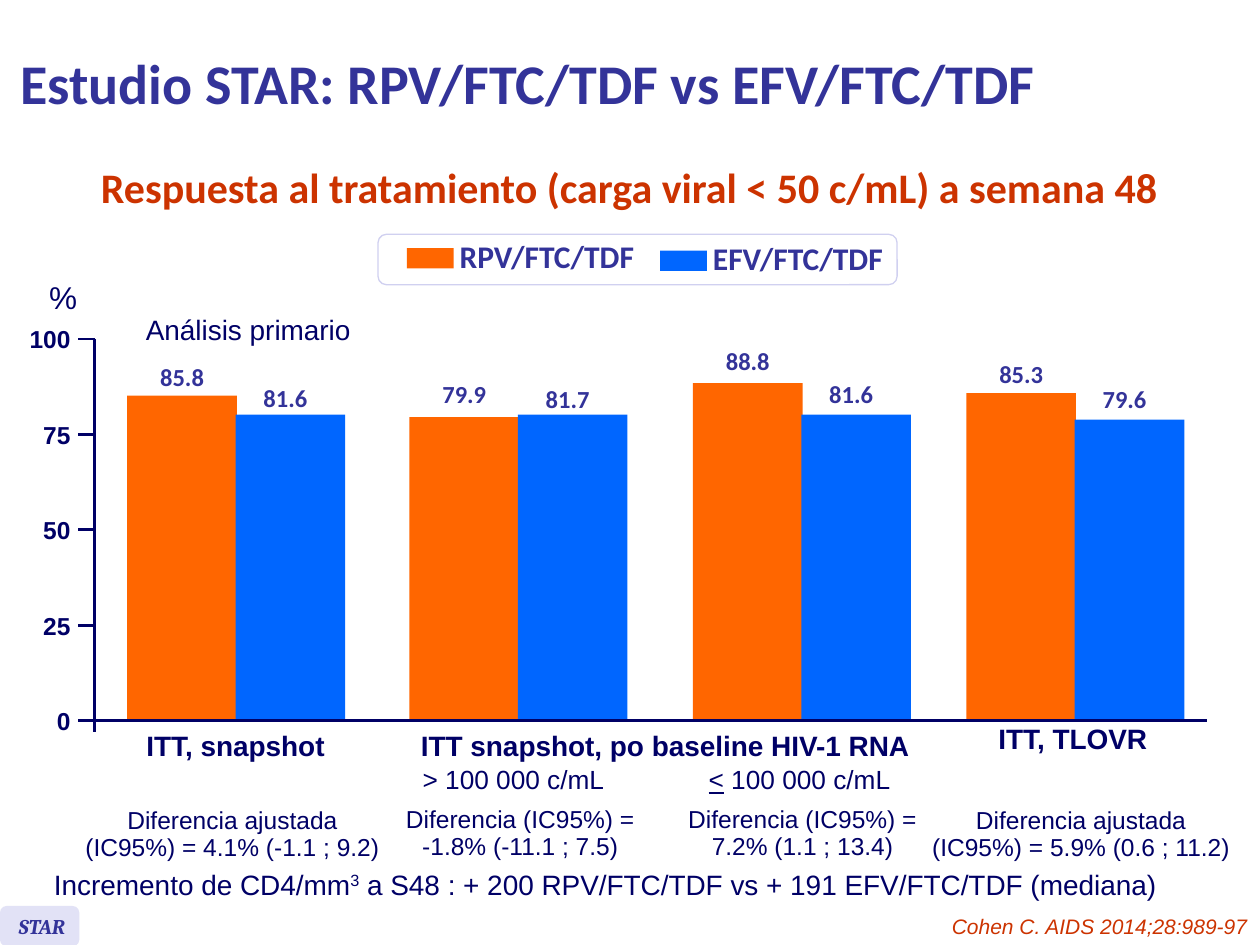
from dataclasses import dataclass
from typing import NamedTuple

from lxml.etree import SubElement
from pptx import Presentation
from pptx.dml.color import RGBColor
from pptx.enum.shapes import MSO_CONNECTOR, MSO_SHAPE
from pptx.enum.text import MSO_ANCHOR as Anchor, PP_ALIGN as Align
from pptx.oxml.ns import qn
from pptx.util import Inches, Pt


@dataclass(frozen=True)
class Theme:
    navy: str = "000066"
    indigo: str = "333399"
    red: str = "CC3300"
    rilpivirine: str = "FF6600"
    efavirenz: str = "0066FF"
    tag: str = "E2E2F6"
    legend_border: str = "D0D0F0"
    white: str = "FFFFFF"
    title: int = 32
    subtitle: int = 24
    large: int = 18
    body: int = 16
    baseline: int = 15
    small: int = 14
    footer: int = 12


THEME = Theme()


class Box(NamedTuple):
    left: float
    top: float
    width: float
    height: float


class Style(NamedTuple):
    size: int
    color: str = THEME.navy
    font: str = "Arial"
    bold: bool = False
    italic: bool = False


class Bar(NamedTuple):
    value: str
    top: float
    label_top: float


class Group(NamedTuple):
    left: float
    rilpivirine: Bar
    efavirenz: Bar
    difference_box: Box
    difference: list[str]


class Label(NamedTuple):
    box: Box
    text: str
    style: Style
    align: Align = Align.CENTER


PLAIN = Style(THEME.body)
HEADING = Style(THEME.body, bold=True)
SMALL = Style(THEME.small)
TICK = Style(THEME.small, bold=True)
BASELINE = Style(THEME.baseline)
VALUE = Style(THEME.small, THEME.indigo, "Calibri", bold=True)
LEGEND = Style(THEME.large, THEME.indigo, "Calibri", bold=True)

BAR_WIDTH = 0.87
BAR_STEP = 0.86
AXIS_X = 0.75
AXIS_Y = 5.72
AXIS_TOP = 2.69

GROUPS = [
    Group(1.01, Bar("85.8", 3.14, 2.77), Bar("81.6", 3.29, 2.94), Box(0.57, 6.37, 2.55, 0.53),
          ["Diferencia ajustada", "(IC95%) = 4.1% (-1.1 ; 9.2)"]),
    Group(3.25, Bar("79.9", 3.31, 2.91), Bar("81.7", 3.29, 2.95), Box(3.01, 6.36, 2.24, 0.53),
          ["Diferencia (IC95%) =", "-1.8% (-11.1 ; 7.5)"]),
    Group(5.5, Bar("88.8", 3.04, 2.65), Bar("81.6", 3.29, 2.91), Box(5.25, 6.36, 2.24, 0.53),
          ["Diferencia (IC95%) =", "7.2% (1.1 ; 13.4)"]),
    Group(7.67, Bar("85.3", 3.12, 2.75), Bar("79.6", 3.33, 2.95), Box(7.29, 6.37, 2.58, 0.53),
          ["Diferencia ajustada", "(IC95%) = 5.9% (0.6 ; 11.2)"]),
]

LABELS = [
    Label(Box(0.66, 1.23, 8.67, 0.5), "Respuesta al tratamiento (carga viral < 50 c/mL) a semana 48",
          Style(THEME.subtitle, THEME.red, "Calibri", bold=True)),
    Label(Box(7, 7.2, 3, 0.3), "Cohen C. AIDS 2014;28:989-97",
          Style(THEME.footer, THEME.red, italic=True), Align.RIGHT),
    Label(Box(0.05, 7.2, 0.61, 0.3), "STAR",
          Style(THEME.footer, THEME.indigo, "Cambria", bold=True, italic=True), Align.LEFT),
    Label(Box(3.55, 1.83, 1.73, 0.4), "RPV/FTC/TDF", LEGEND, Align.LEFT),
    Label(Box(5.56, 1.85, 1.75, 0.4), "EFV/FTC/TDF", LEGEND, Align.LEFT),
    Label(Box(0.2, 2.16, 0.51, 0.4), "%", Style(THEME.large), Align.RIGHT),
    Label(Box(1.01, 2.43, 1.92, 0.37), "Análisis primario", PLAIN),
    Label(Box(1.05, 5.73, 1.64, 0.37), "ITT, snapshot", HEADING),
    Label(Box(3.17, 5.73, 4.22, 0.37), "ITT snapshot, po baseline HIV-1 RNA", HEADING),
    Label(Box(7.81, 5.68, 1.41, 0.37), "ITT, TLOVR", HEADING),
]


def place(shape, box: Box) -> None:
    shape.left, shape.top, shape.width, shape.height = map(Inches, box)


def format_paragraph(paragraph, style: Style, align: Align) -> None:
    paragraph.alignment = align
    font = paragraph.font
    font.name, font.size = style.font, Pt(style.size)
    font.bold, font.italic = style.bold, style.italic
    font.color.rgb = RGBColor.from_string(style.color)


def add_text(slide, box: Box, lines: list[str], style: Style, align: Align = Align.CENTER,
             spacing: float = 1.0, anchor: Anchor = Anchor.TOP):
    """Centred text stays on its line and may overflow its box evenly."""
    frame = slide.shapes.add_textbox(*map(Inches, box)).text_frame
    frame.word_wrap = align != Align.CENTER
    frame.vertical_anchor = anchor
    frame.text = "\n".join(lines)
    for paragraph in frame.paragraphs:
        paragraph.line_spacing = spacing
        format_paragraph(paragraph, style, align)
    return frame


def add_block(slide, box: Box, fill: str, border: str | None = None, rounded: bool = False) -> None:
    kind = MSO_SHAPE.ROUNDED_RECTANGLE if rounded else MSO_SHAPE.RECTANGLE
    shape = slide.shapes.add_shape(kind, *map(Inches, box))
    shape.shadow.inherit = False
    shape.fill.solid()
    shape.fill.fore_color.rgb = RGBColor.from_string(fill)
    if border:
        shape.line.color.rgb = RGBColor.from_string(border)
        shape.line.width = Pt(0.75)
    else:
        shape.line.fill.background()


def add_line(slide, x1: float, y1: float, x2: float, y2: float) -> None:
    line = slide.shapes.add_connector(MSO_CONNECTOR.STRAIGHT, *map(Inches, (x1, y1, x2, y2)))
    line.line.color.rgb = RGBColor.from_string(THEME.navy)
    line.line.width = Pt(1.5)
    SubElement(line._element.spPr, qn("a:effectLst"))


def add_axes(slide) -> None:
    step = (AXIS_Y - AXIS_TOP) / 4
    for index in range(5):
        y = AXIS_Y - index * step
        frame = add_text(slide, Box(0.16, y - 0.12, 0.4, 0.24), [str(index * 25)], TICK,
                         Align.RIGHT, anchor=Anchor.MIDDLE)
        frame.margin_left = frame.margin_right = frame.margin_top = frame.margin_bottom = 0
        add_line(slide, 0.62, y, AXIS_X if index else 9.58, y)
    add_line(slide, AXIS_X, AXIS_TOP, AXIS_X, 5.81)


def add_group(slide, group: Group) -> None:
    series = [(group.rilpivirine, THEME.rilpivirine, 0, 0.16),
              (group.efavirenz, THEME.efavirenz, BAR_STEP, 0.98)]
    for bar, color, offset, label_offset in series:
        add_block(slide, Box(group.left + offset, bar.top, BAR_WIDTH, AXIS_Y - bar.top), color)
        frame = add_text(slide, Box(group.left + label_offset, bar.label_top, 0.55, 0.44),
                         [bar.value], VALUE)
        frame.margin_top = frame.margin_bottom = Inches(0.1)
    add_text(slide, group.difference_box, group.difference, SMALL, spacing=0.9)


def add_title(slide) -> None:
    title = slide.shapes.title
    place(title, Box(0.06, 0.05, 9.55, 1.21))
    frame = title.text_frame
    frame.text = "Estudio STAR: RPV/FTC/TDF vs EFV/FTC/TDF"
    frame.vertical_anchor = Anchor.MIDDLE
    format_paragraph(frame.paragraphs[0],
                     Style(THEME.title, THEME.indigo, "Calibri", bold=True), Align.LEFT)


def main() -> None:
    presentation = Presentation()
    presentation.slide_width, presentation.slide_height = Inches(10), Inches(7.5)
    slide = presentation.slides.add_slide(presentation.slide_layouts[5])
    add_title(slide)
    add_block(slide, Box(0, 7.19, 0.63, 0.32), THEME.tag, rounded=True)
    add_block(slide, Box(3, 1.86, 4.12, 0.4), THEME.white, THEME.legend_border, rounded=True)
    add_block(slide, Box(3.23, 1.97, 0.37, 0.16), THEME.rilpivirine)
    add_block(slide, Box(5.24, 1.99, 0.37, 0.16), THEME.efavirenz)
    for group in GROUPS:
        add_group(slide, group)
    add_axes(slide)
    for label in LABELS:
        add_text(slide, label.box, [label.text], label.style, label.align)

    add_text(slide, Box(3.25, 6.04, 1.65, 0.33), ["> 100 000 c/mL"], BASELINE, spacing=0.9)
    at_most = add_text(slide, Box(5.52, 6.04, 1.65, 0.33), ["<"], BASELINE, spacing=0.9).paragraphs[0]
    at_most.runs[0].font.underline = True
    at_most.add_run().text = " 100 000 c/mL"

    increase = add_text(slide, Box(0.33, 6.83, 9.23, 0.37), ["Incremento de CD4/mm"], PLAIN,
                        Align.LEFT, anchor=Anchor.MIDDLE).paragraphs[0]
    cubed = increase.add_run()
    cubed.text = "3"
    cubed.font._element.set("baseline", "30000")
    increase.add_run().text = " a S48 : + 200 RPV/FTC/TDF vs + 191 EFV/FTC/TDF (mediana)"
    presentation.save("out.pptx")


if __name__ == "__main__":
    main()
